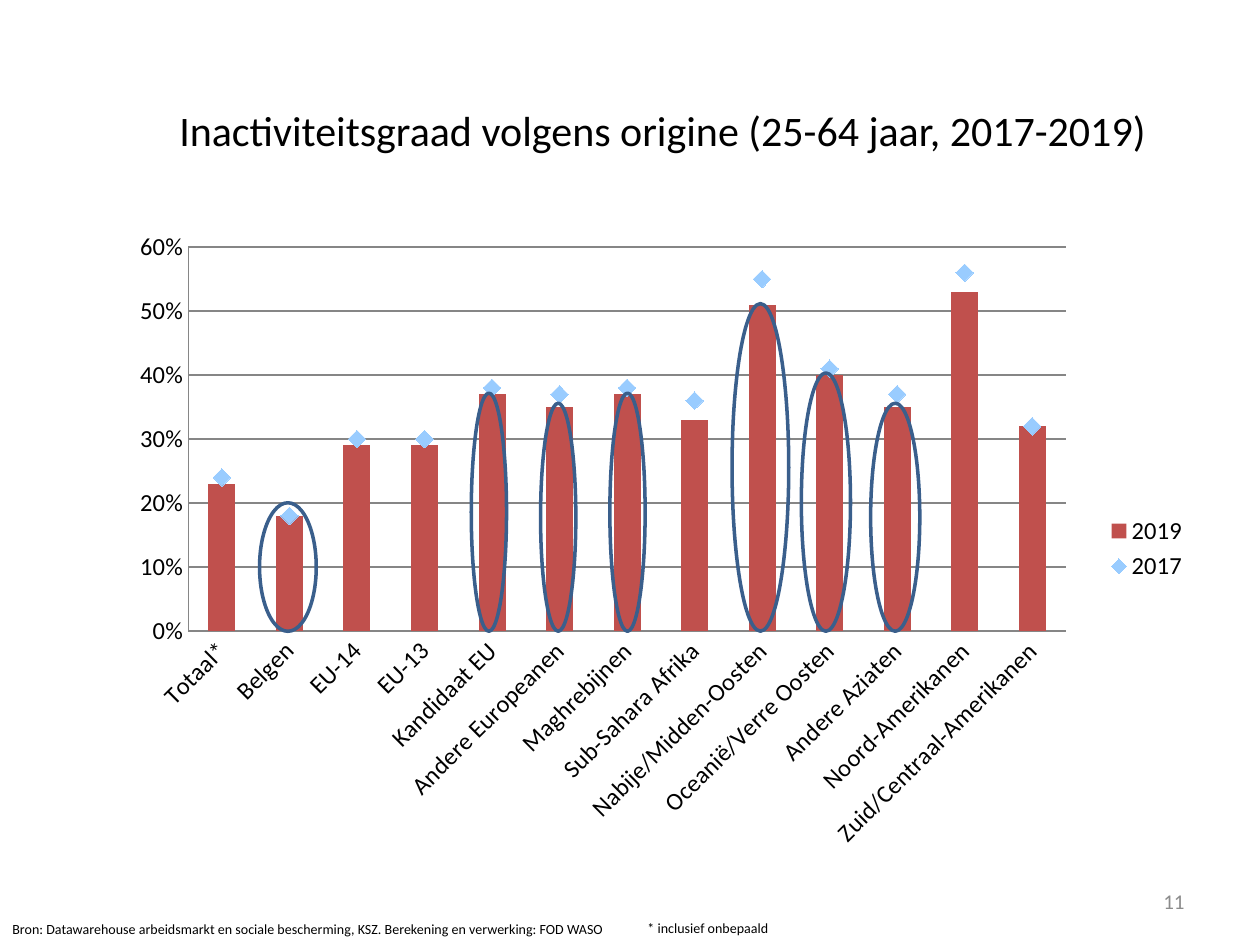
from lxml import etree
from pptx import Presentation
from pptx.chart.data import CategoryChartData
from pptx.dml.color import RGBColor
from pptx.enum.chart import XL_CHART_TYPE as ChartType, XL_LEGEND_POSITION as LegendPosition
from pptx.enum.chart import XL_MARKER_STYLE as MarkerStyle, XL_TICK_MARK as TickMark
from pptx.enum.shapes import MSO_SHAPE as Shape
from pptx.enum.text import MSO_ANCHOR as Anchor, MSO_AUTO_SIZE as AutoSize, PP_ALIGN as Align
from pptx.oxml import parse_xml
from pptx.oxml.ns import nsdecls, qn
from pptx.util import Inches, Pt


def color(value):
    return RGBColor.from_string(value)


def write(box, text, size, ink="000000", align=Align.LEFT, anchor=Anchor.TOP, wrap=True):
    frame = box.text_frame
    frame.text = text
    frame.word_wrap = wrap
    frame.auto_size = AutoSize.NONE
    frame.vertical_anchor = anchor
    para = frame.paragraphs[0]
    para.alignment = align
    para.font.name = "Calibri"
    para.font.size = Pt(size)
    para.font.color.rgb = color(ink)


deck = Presentation()
deck.slide_width, deck.slide_height = Inches(10), Inches(7.5)
page = deck.slides.add_slide(deck.slide_layouts[5])

# Title
title = page.shapes.title
title.left, title.top, title.width, title.height = Inches(1.3), Inches(0.78), Inches(7.92), Inches(0.5)
write(title, "Inactiviteitsgraad volgens origine (25-64 jaar, 2017-2019)", 24, align=Align.CENTER)

# Page number, source and footnote
number = page.shapes.add_textbox(Inches(7.17), Inches(6.95), Inches(2.33), Inches(0.4))
write(number, "11", 12, "8C8C8C", Align.RIGHT, Anchor.MIDDLE)
source = page.shapes.add_textbox(Inches(0), Inches(7.26), Inches(5.07), Inches(0.24))
write(source, "Bron: Datawarehouse arbeidsmarkt en sociale bescherming, KSZ. "
      "Berekening en verwerking: FOD WASO", 8)
footnote = page.shapes.add_textbox(Inches(5.04), Inches(7.25), Inches(1.18), Inches(0.24))
write(footnote, "* inclusief onbepaald", 8, wrap=False)

# Chart data
rates = [
    ("Totaal*", 0.23, 0.24),
    ("Belgen", 0.18, 0.18),
    ("EU-14", 0.29, 0.30),
    ("EU-13", 0.29, 0.30),
    ("Kandidaat EU", 0.37, 0.38),
    ("Andere Europeanen", 0.35, 0.37),
    ("Maghrebijnen", 0.37, 0.38),
    ("Sub-Sahara Afrika", 0.33, 0.36),
    ("Nabije/Midden-Oosten", 0.51, 0.55),
    ("Oceanië/Verre Oosten", 0.40, 0.41),
    ("Andere Aziaten", 0.35, 0.37),
    ("Noord-Amerikanen", 0.53, 0.56),
    ("Zuid/Centraal-Amerikanen", 0.32, 0.32),
]
origins, rates_2019, rates_2017 = zip(*rates)
data = CategoryChartData(number_format="0%")
data.categories = origins
data.add_series("2019", rates_2019)
data.add_series("2017", rates_2017)
chart = page.shapes.add_chart(ChartType.COLUMN_CLUSTERED, Inches(0.62), Inches(1.76),
                              Inches(8.91), Inches(5.19), data).chart
chart.has_title = False
chart.font.name = "Calibri"
chart.font.size = Pt(14)
chart.font.color.rgb = color("000000")
chart.has_legend = True
chart.legend.position = LegendPosition.RIGHT
chart.legend.include_in_layout = False

# Move the 2017 series to a line chart on the same axes
plot_area = chart.element.find(".//" + qn("c:plotArea"))
bar_chart = plot_area.find(qn("c:barChart"))
line_chart = parse_xml(f'<c:lineChart {nsdecls("c")}><c:grouping val="standard"/>'
                       '<c:varyColors val="0"/></c:lineChart>')
bar_chart.addnext(line_chart)
moved = bar_chart.findall(qn("c:ser"))[1]
for bar_only in moved.findall(qn("c:invertIfNegative")):
    moved.remove(bar_only)
line_chart.append(moved)
etree.SubElement(line_chart, qn("c:marker")).set("val", "1")
for axis_id in bar_chart.findall(qn("c:axId")):
    etree.SubElement(line_chart, qn("c:axId")).set("val", axis_id.get("val"))

# Fixed inner plot area
for old_layout in plot_area.findall(qn("c:layout")):
    plot_area.remove(old_layout)
layout = etree.Element(qn("c:layout"))
manual = etree.SubElement(layout, qn("c:manualLayout"))
for tag, value in [("layoutTarget", "inner"), ("xMode", "edge"), ("yMode", "edge"),
                   ("x", "0.098"), ("y", "0.039"), ("w", "0.782"), ("h", "0.587")]:
    etree.SubElement(manual, qn("c:" + tag)).set("val", value)
plot_area.insert(0, layout)

# Series formats
columns, markers = chart.plots
columns.gap_width = 150
columns.vary_by_categories = False
bars = columns.series[0]
bars.format.fill.solid()
bars.format.fill.fore_color.rgb = color("C0504D")
points = markers.series[0]
points.smooth = False
points.format.line.fill.background()
points.marker.style = MarkerStyle.DIAMOND
points.marker.size = 10
points.marker.format.fill.solid()
points.marker.format.fill.fore_color.rgb = color("99CCFF")
points.marker.format.line.fill.background()

# Axes
value_axis, category_axis = chart.value_axis, chart.category_axis
value_axis.minimum_scale, value_axis.maximum_scale, value_axis.major_unit = 0, 0.6, 0.1
value_axis.tick_labels.number_format = "0%"
value_axis.tick_labels.number_format_is_linked = False
value_axis.has_major_gridlines = True
for axis in (value_axis, category_axis):
    axis.major_tick_mark = axis.minor_tick_mark = TickMark.NONE
    axis.tick_labels.font.size = Pt(14)
for lined in (value_axis, category_axis, value_axis.major_gridlines):
    lined.format.line.color.rgb = color("868686")
    lined.format.line.width = Pt(0.75)
label_body = plot_area.find(f"{qn('c:catAx')}/{qn('c:txPr')}/{qn('a:bodyPr')}")
label_body.set("rot", "-2700000")
label_body.set("vert", "horz")

# Ellipses around the highlighted groups, all resting on the zero line
baseline = 5.01
for left, width, height in [(5.81, 0.45, 2.6), (3.74, 0.28, 1.89), (4.29, 0.28, 1.81),
                            (4.84, 0.28, 1.89), (6.91, 0.39, 1.81), (6.36, 0.39, 2.05),
                            (2.06, 0.45, 1.02)]:
    ring = page.shapes.add_shape(Shape.OVAL, Inches(left), Inches(baseline - height),
                                 Inches(width), Inches(height))
    ring.shadow.inherit = False
    ring.fill.background()
    ring.line.color.rgb = color("3A5F8C")
    ring.line.width = Pt(2)

deck.save("out.pptx")
